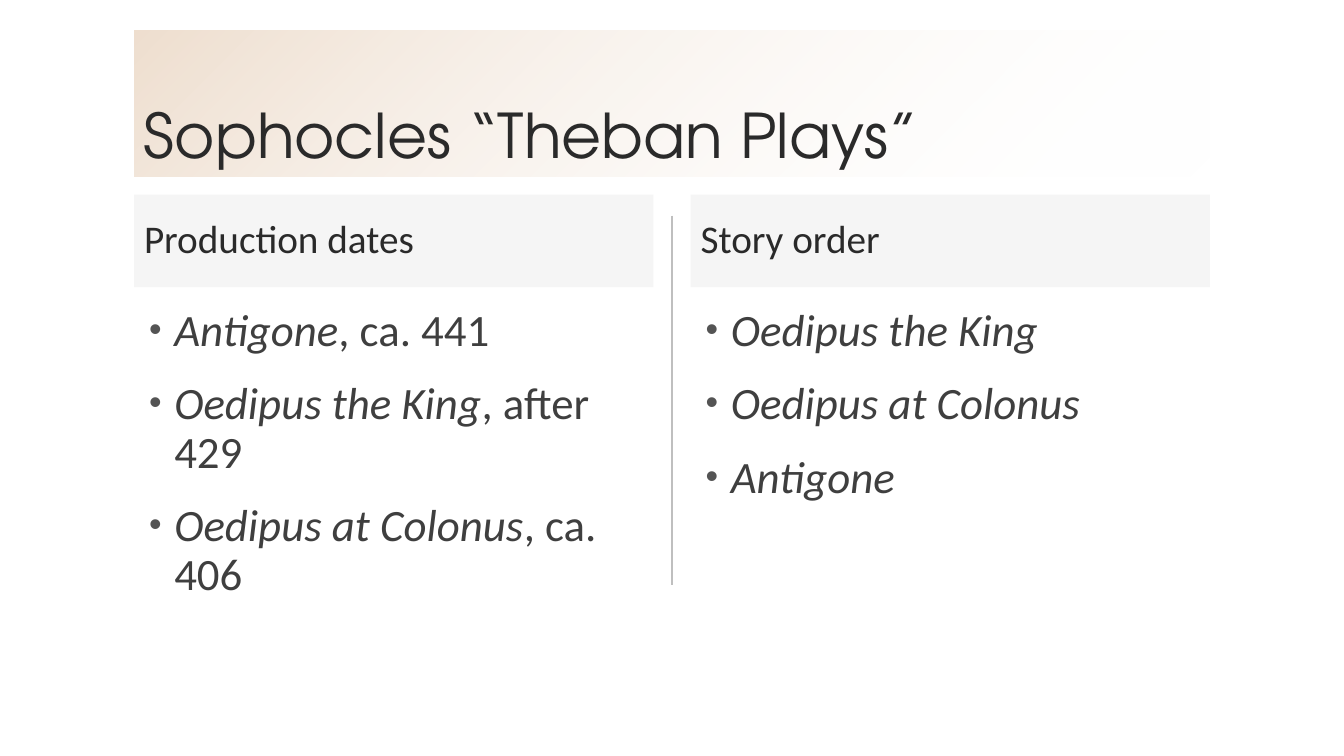
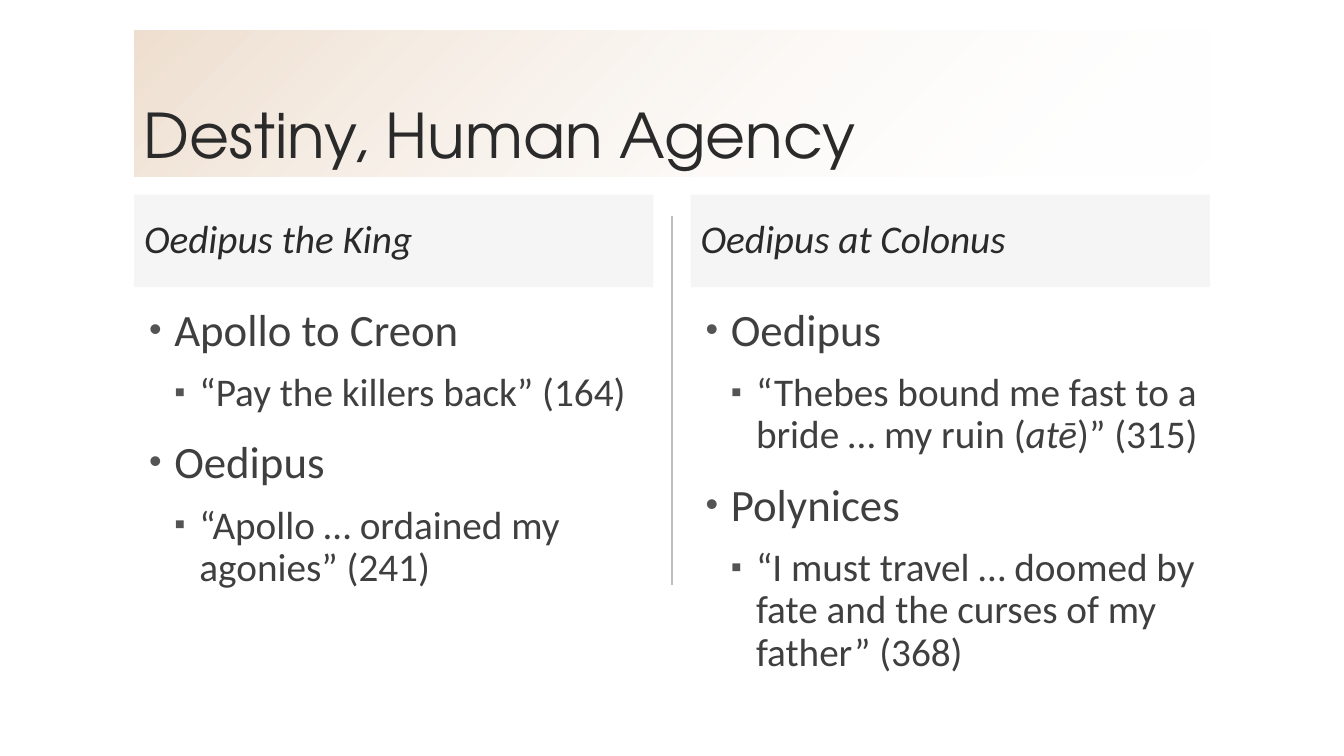
import pptx
import pptx.dml.color
import pptx.enum.shapes
import pptx.enum.text
import pptx.oxml
import pptx.oxml.ns
import pptx.util
from pptx.util import Inches, Pt

# Text between asterisks is italic; each point is (level, text).
SLIDES = [
    {
        "title": "Sophocles “Theban Plays”",
        "points_height": 3.75,
        "columns": [
            ("Production dates", [
                (0, "*Antigone*, ca. 441"),
                (0, "*Oedipus the King*, after 429"),
                (0, "*Oedipus at Colonus*, ca. 406"),
            ]),
            ("Story order", [
                (0, "*Oedipus the King*"),
                (0, "*Oedipus at Colonus*"),
                (0, "*Antigone*"),
            ]),
        ],
    },
    {
        "title": "Destiny, Human Agency",
        "points_height": 4.5,
        "columns": [
            ("*Oedipus the King*", [
                (0, "Apollo to Creon"),
                (1, "“Pay the killers back” (164)"),
                (0, "Oedipus"),
                (1, "“Apollo … ordained my agonies” (241)"),
            ]),
            ("*Oedipus at Colonus*", [
                (0, "Oedipus"),
                (1, "“Thebes bound me fast to a bride … my ruin (*atē*)” (315)"),
                (0, "Polynices"),
                (1, "“I must travel … doomed by fate and the curses of my father” (368)"),
            ]),
        ],
    },
]

THEME = {
    "title": {"name": "TeX Gyre Adventor", "size": Pt(44), "color": "2A2A2A"},
    "heading": {"name": "Calibri", "size": Pt(28), "color": "2A2A2A"},
    "points": [
        {"name": "Calibri", "size": Pt(32), "color": "3F3F3F"},
        {"name": "Calibri", "size": Pt(28), "color": "3F3F3F"},
    ],
    "bullets": [
        {"char": "•", "indent": 0.3, "space_before": Pt(18)},
        {"char": "▪", "indent": 0.55, "space_before": Pt(12)},
    ],
    "bullet_color": "545454",
    "band_stops": [(0, "CE9F71", 34), (1, "FFFFFF", 0)],
    "grey": "BFBFBF",
    "heading_opacity": 15,
    "line_spacing": 0.9,
}

SLIDE_W, SLIDE_H = 13.33, 7.5
MARGIN = 1.33
BAND_W = 10.67
COLUMN_W = 5.15
TITLE_TOP, TITLE_H = 0.3, 1.45
HEADING_TOP, HEADING_H = 1.93, 0.92
POINTS_TOP = 3
DIVIDER_TOP, DIVIDER_BOTTOM = 2.14, 5.8
HANGING = 0.25


def rgb(value):
    return pptx.dml.color.RGBColor.from_string(value)


def set_opacity(color_parent, percent):
    for color in color_parent.iter(pptx.oxml.ns.qn("a:srgbClr")):
        alpha = pptx.oxml.parse_xml(
            f'<a:alpha {pptx.oxml.ns.nsdecls("a")} val="{percent * 1000}"/>')
        color.append(alpha)


def write(paragraph, marked_text, style):
    """Fill a paragraph, setting the parts between asterisks in italics."""
    paragraph.line_spacing = THEME["line_spacing"]
    for number, part in enumerate(marked_text.split("*")):
        if not part:
            continue
        run = paragraph.add_run()
        run.text = part
        for attribute, value in style.items():
            if attribute == "color":
                run.font.color.rgb = rgb(value)
            else:
                setattr(run.font, attribute, value)
        run.font.italic = number % 2 == 1


def add_bullet(paragraph, level):
    bullet = THEME["bullets"][level]
    paragraph.level = level
    paragraph.space_before = bullet["space_before"]
    properties = paragraph._p.get_or_add_pPr()
    properties.set("marL", str(Inches(bullet["indent"])))
    properties.set("indent", str(-Inches(HANGING)))
    for markup in (
        f'<a:buClr {{}}><a:srgbClr val="{THEME["bullet_color"]}"/></a:buClr>',
        '<a:buSzPct {} val="80000"/>',
        '<a:buFont {} typeface="Arial"/>',
        f'<a:buChar {{}} char="{bullet["char"]}"/>',
    ):
        properties.append(pptx.oxml.parse_xml(markup.format(pptx.oxml.ns.nsdecls("a"))))


def add_band(slide, box, text, style, anchor):
    band = slide.shapes.add_shape(
        pptx.enum.shapes.MSO_SHAPE.RECTANGLE, *map(Inches, box))
    band.shadow.inherit = False
    band.line.fill.background()
    frame = band.text_frame
    frame.word_wrap = True
    frame.vertical_anchor = anchor
    paragraph = frame.paragraphs[0]
    paragraph.alignment = pptx.enum.text.PP_ALIGN.LEFT
    write(paragraph, text, style)
    return band


def add_title(slide, text):
    band = add_band(slide, (MARGIN, TITLE_TOP, BAND_W, TITLE_H), text,
                    THEME["title"], pptx.enum.text.MSO_ANCHOR.BOTTOM)
    band.fill.gradient()
    band.fill.gradient_angle = 315  # counter-clockwise: runs down to the right
    for stop, (position, color, opacity) in zip(
            band.fill.gradient_stops, THEME["band_stops"]):
        stop.position = position
        stop.color.rgb = rgb(color)
        set_opacity(stop._gs, opacity)


def add_heading(slide, left, text):
    band = add_band(slide, (left, HEADING_TOP, COLUMN_W, HEADING_H), text,
                    THEME["heading"], pptx.enum.text.MSO_ANCHOR.MIDDLE)
    band.fill.solid()
    band.fill.fore_color.rgb = rgb(THEME["grey"])
    set_opacity(band._element.spPr.find(pptx.oxml.ns.qn("a:solidFill")),
                THEME["heading_opacity"])


def add_points(slide, left, height, points):
    frame = slide.shapes.add_textbox(
        *map(Inches, (left, POINTS_TOP, COLUMN_W, height))).text_frame
    frame.word_wrap = True
    for number, (level, text) in enumerate(points):
        paragraph = frame.add_paragraph() if number else frame.paragraphs[0]
        add_bullet(paragraph, level)
        write(paragraph, text, THEME["points"][level])


def add_divider(slide):
    middle = MARGIN + BAND_W / 2
    divider = slide.shapes.add_connector(
        pptx.enum.shapes.MSO_CONNECTOR.STRAIGHT,
        *map(Inches, (middle, DIVIDER_TOP, middle, DIVIDER_BOTTOM)))
    divider.line.color.rgb = rgb(THEME["grey"])
    divider.line.width = Pt(1)
    divider._element.spPr.append(pptx.oxml.parse_xml(
        f'<a:effectLst {pptx.oxml.ns.nsdecls("a")}/>'))


def main():
    deck = pptx.Presentation()
    deck.slide_width, deck.slide_height = Inches(SLIDE_W), Inches(SLIDE_H)
    for content in SLIDES:
        slide = deck.slides.add_slide(deck.slide_layouts[6])
        add_divider(slide)
        add_title(slide, content["title"])
        for number, (heading, points) in enumerate(content["columns"]):
            left = MARGIN + number * (BAND_W - COLUMN_W)
            add_heading(slide, left, heading)
            add_points(slide, left, content["points_height"], points)
    deck.save("out.pptx")


if __name__ == "__main__":
    main()
